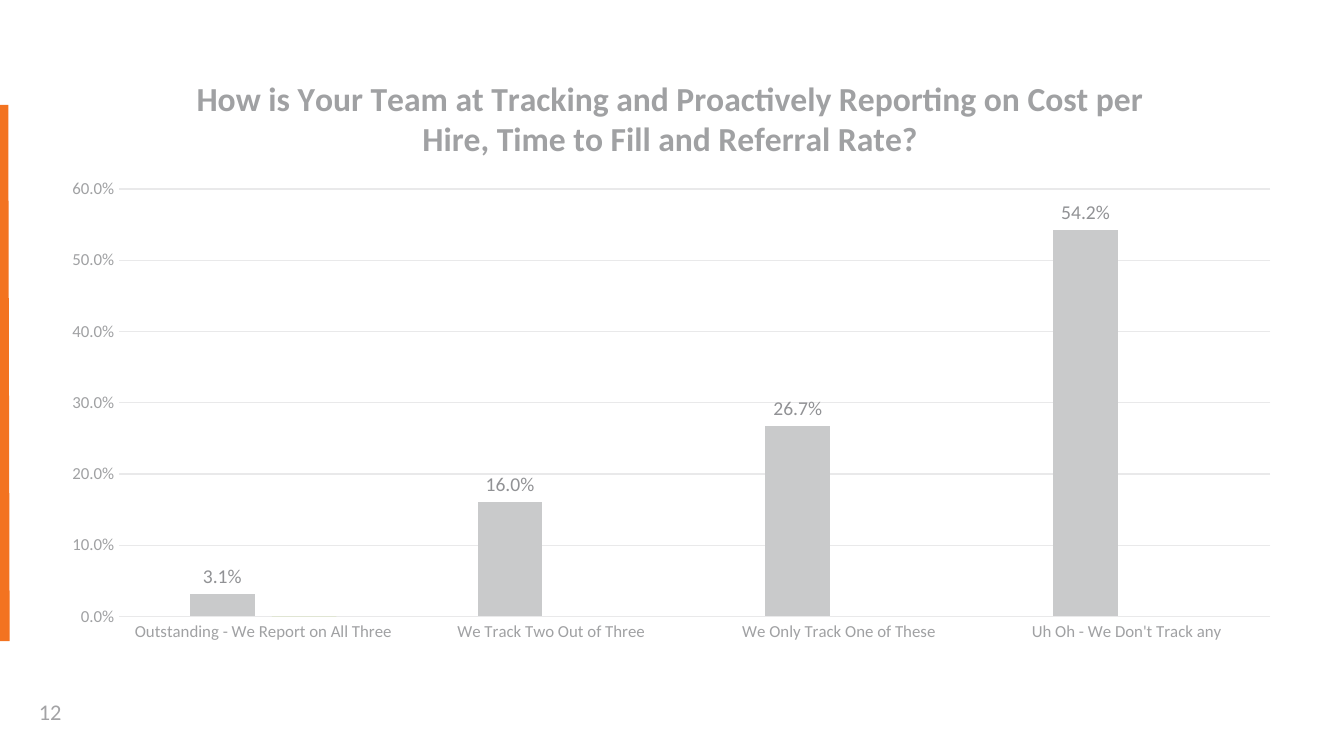
from lxml import etree
from pptx import Presentation
from pptx.chart import data
from pptx.dml.color import RGBColor
from pptx.enum import chart as ch, shapes, text
from pptx.oxml import parse_xml
from pptx.oxml.ns import qn
from pptx.util import Inches, Pt

FONT = "Calibri"
GRAY, GRID, BAR, GREEN, ORANGE = "A0A1A3", "E9E9EA", "C9CACB", "A6CE38", "F37320"
TITLE = ("How is Your Team at Tracking and Proactively Reporting on "
         "Cost per Hire, Time to Fill and Referral Rate?")
PAGE = "12"
ANSWERS = [
    ("Outstanding - We Report on All Three", 0.031),
    ("We Track Two Out of Three", 0.16),
    ("We Only Track One of These", 0.267),
    ("Uh Oh - We Don't Track any", 0.542),
]
CHART_BOX = (0.35, 0.4, 9.28, 4.46)
PLOT_BOX = (0.89, 1.41, 8.57, 3.18)
TITLE_CORNER = (1.42, 0.51)


def rgb(value):
    return RGBColor.from_string(value)


def style(font, size, color, bold=False):
    font.name, font.size, font.bold = FONT, Pt(size), bold
    font.color.rgb = rgb(color)


def place(element, index, box, inner=False):
    """Give a chart part a fixed place, from slide inches to chart fractions."""
    for old in element.findall(qn("c:layout")):
        element.remove(old)
    left, top, width, height = CHART_BOX
    fractions = [(box[0] - left) / width, (box[1] - top) / height]
    if inner:
        fractions += [box[2] / width, box[3] / height]
    layout = parse_xml('<c:layout xmlns:c="http://schemas.openxmlformats.org/'
                       'drawingml/2006/chart"><c:manualLayout/></c:layout>')
    settings = [("layoutTarget", "inner")] if inner else []
    settings += [("xMode", "edge"), ("yMode", "edge")]
    settings += [(n, f"{f:.3f}") for n, f in zip("xywh", fractions)]
    for name, value in settings:
        etree.SubElement(layout[0], qn(f"c:{name}")).set("val", value)
    element.insert(index, layout)


def add_accent(slide):
    accent = slide.shapes.add_connector(
        shapes.MSO_CONNECTOR.STRAIGHT,
        Inches(0.02), Inches(0.78), Inches(0.03), Inches(4.77))
    accent.line.color.rgb = rgb(ORANGE)
    accent.line.width = Pt(6)
    etree.SubElement(accent._element.spPr, qn("a:effectLst"))


def add_page_number(slide):
    frame = slide.shapes.add_textbox(
        Inches(0.19), Inches(5.15), Inches(0.61), Inches(0.29)).text_frame
    frame.word_wrap = True
    frame.vertical_anchor = text.MSO_ANCHOR.MIDDLE
    frame.text = PAGE
    style(frame.paragraphs[0].runs[0].font, 12, "A3A3A5")


def add_survey_chart(slide):
    labels, shares = zip(*ANSWERS)
    survey = data.CategoryChartData(number_format="0.0%")
    survey.categories = labels
    survey.add_series("Series 1", shares)
    survey.add_series("Series 2", [0])
    chart = slide.shapes.add_chart(
        ch.XL_CHART_TYPE.COLUMN_CLUSTERED, *map(Inches, CHART_BOX), survey).chart
    style(chart.font, 10, "6D6E71")
    chart.has_legend = False

    chart.has_title = True
    title = chart.chart_title
    title.text_frame.text = TITLE
    style(title.text_frame.paragraphs[0].runs[0].font, 18, GRAY, True)
    title.include_in_layout = False
    place(title._element, 1, TITLE_CORNER)

    for axis in (chart.category_axis, chart.value_axis):
        axis.major_tick_mark = axis.minor_tick_mark = ch.XL_TICK_MARK.NONE
        style(axis.tick_labels.font, 9, GRAY)
    values = chart.value_axis
    values.minimum_scale, values.maximum_scale, values.major_unit = 0, 0.6, 0.1
    values.tick_labels.number_format = "0.0%"
    values.tick_labels.number_format_is_linked = False
    values.format.line.fill.background()
    for line in (chart.category_axis.format.line, values.major_gridlines.format.line):
        line.color.rgb = rgb(GRID)
        line.width = Pt(0.75)

    plot = chart.plots[0]
    plot.gap_width, plot.overlap, plot.vary_by_categories = 219, -27, False
    for series, color in zip(plot.series, (BAR, GREEN)):
        series.format.fill.solid()
        series.format.fill.fore_color.rgb = rgb(color)
    shown = plot.series[0].data_labels
    shown.show_value = True
    shown.number_format, shown.number_format_is_linked = "0.0%", False
    shown.position = ch.XL_LABEL_POSITION.OUTSIDE_END
    style(shown.font, 10.5, "919295")
    place(chart._chartSpace.chart.plotArea, 0, PLOT_BOX, inner=True)


def main():
    deck = Presentation()
    deck.slide_width, deck.slide_height = Inches(10), Inches(10 * 9 / 16)
    slide = deck.slides.add_slide(deck.slide_layouts[6])
    add_accent(slide)
    add_page_number(slide)
    add_survey_chart(slide)
    deck.save("out.pptx")


if __name__ == "__main__":
    main()
